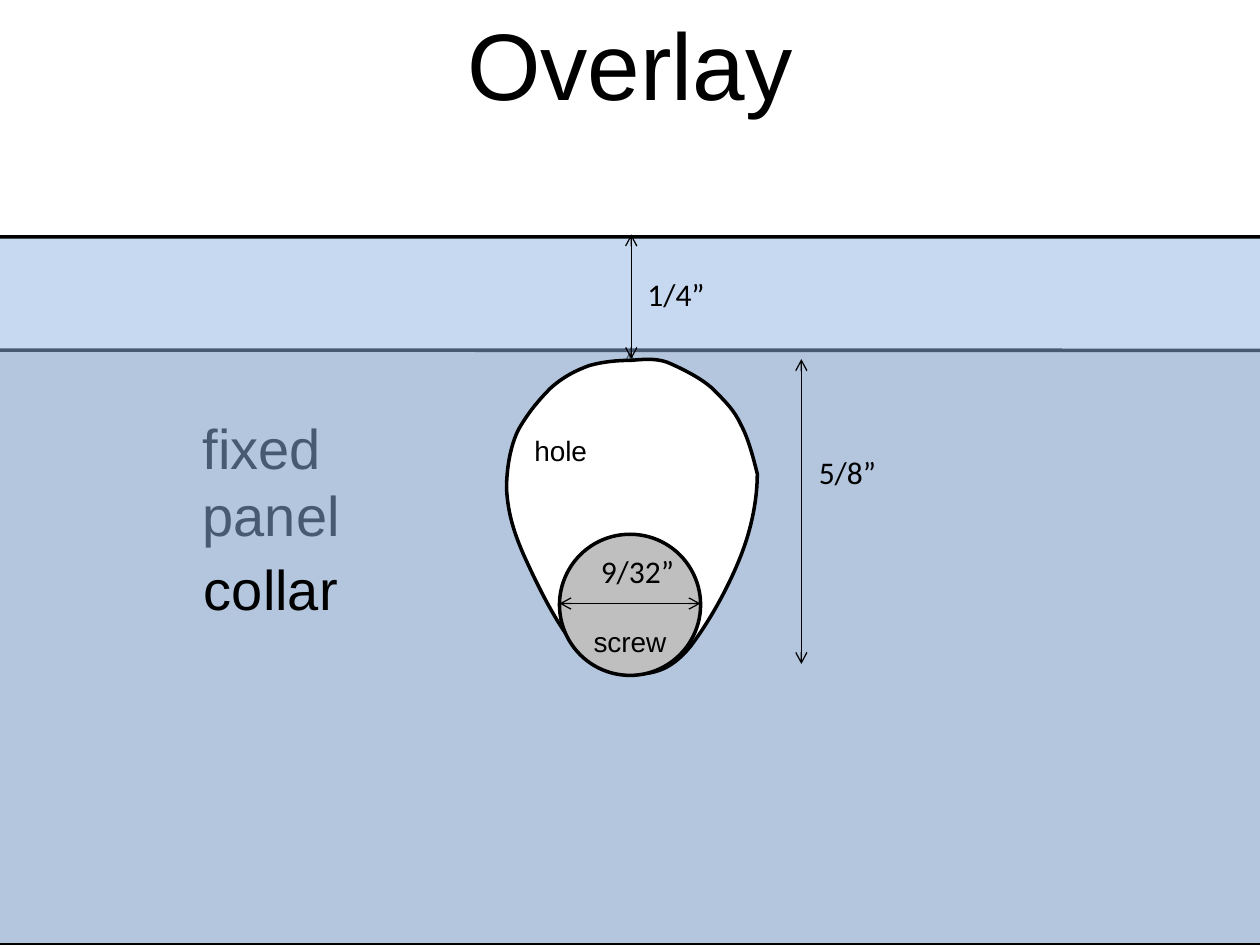
import pptx
import pptx.util
import pptx.dml.color
import pptx.enum.shapes
import pptx.enum.text
import lxml.etree

Inch, Pt = pptx.util.Inches, pptx.util.Pt
Kind = pptx.enum.shapes.MSO_SHAPE
Align = pptx.enum.text.PP_ALIGN
Anchor = pptx.enum.text.MSO_ANCHOR
A = "http://schemas.openxmlformats.org/drawingml/2006/main"
BLACK = "000000"

WIDE, HIGH = 10, 7.5
SIDE = -0.24  # plates run past both slide edges
PANEL_TOP, COLLAR_TOP = 2.78, 1.88
HOLE_TOP, HOLE_LOW = 2.85, 5.27
SCREW = (4.44, 4.24, 1.12)  # left, top, diameter

ARROWS = [  # x1, y1, x2, y2
    (5.01, 1.86, 5.01, HOLE_TOP),
    (6.36, HOLE_TOP, 6.36, HOLE_LOW),
    (SCREW[0], 4.79, SCREW[0] + SCREW[2], 4.79),
]
SIZES = [  # text, left, top, width
    ("1/4”", 5.04, 2.13, 1.15),
    ("5/8”", 6.4, 3.55, 1.15),
    ("9/32”", 4.67, 4.33, 1.24),
]
HOLE_START = (415, 439)  # hundredths of an inch
HOLE_CURVES = [  # two control points and an end point
    [(406, 418), (403, 404), (402, 388)],
    [(402, 372), (405, 353), (412, 340)],
    [(419, 328), (427, 318), (437, 308)],
    [(447, 299), (457, 294), (468, 290)],
    [(479, 287), (490, 286), (501, 286)],
    [(512, 285), (523, 284), (533, 289)],
    [(544, 294), (560, 302), (568, 311)],
    [(576, 319), (583, 326), (588, 337)],
    [(594, 348), (598, 364), (601, 376)],
    [(601, 395), (597, 418), (588, 441)],
    [(579, 464), (564, 492), (548, 513)],
    [(531, 534), (516, 535), (501, 535)],
    [(486, 534), (472, 531), (456, 512)],
    [(440, 493), (424, 459), (415, 439)],
]


def color(code):
    return pptx.dml.color.RGBColor.from_string(code)


def write(shape, text, size=16, font="Arial", align=Align.LEFT,
          anchor=Anchor.TOP, wrap=True, inset=(0.1, 0.05, 0.1, 0.05)):
    """Fill a shape with text; inset is left, top, right, bottom."""
    frame = shape.text_frame
    frame.text = text
    frame.word_wrap = wrap
    frame.vertical_anchor = anchor
    (frame.margin_left, frame.margin_top,
     frame.margin_right, frame.margin_bottom) = map(Inch, inset)
    for para in frame.paragraphs:
        para.alignment = align
        para.font.size = Pt(size)
        para.font.name = font
        para.font.color.rgb = color(BLACK)


def label(slide, text, left, top, width, height, **form):
    box = slide.shapes.add_textbox(*map(Inch, (left, top, width, height)))
    write(box, text, **form)


def paint(shape, fill, alpha=None):
    shape.shadow.inherit = False
    shape.fill.solid()
    shape.fill.fore_color.rgb = color(fill)
    shape.line.color.rgb = color(BLACK)
    shape.line.width = Pt(2)
    if alpha:
        tint = shape.fill._xPr.find(f"{{{A}}}solidFill")[0]
        lxml.etree.SubElement(tint, f"{{{A}}}alpha", val=str(alpha * 1000))


def plate(slide, top, fill, alpha=None):
    """Draw a sheet from top down to the foot of the slide."""
    sheet = slide.shapes.add_shape(
        Kind.ROUNDED_RECTANGLE, Inch(SIDE), Inch(top),
        Inch(10.56), Inch(HIGH - top))
    sheet.adjustments[0] = 0.019
    paint(sheet, fill, alpha)


def arrow(slide, *ends):
    """Draw a thin line with an open arrowhead at both ends."""
    line = slide.shapes.add_connector(
        pptx.enum.shapes.MSO_CONNECTOR.STRAIGHT, *map(Inch, ends))
    line.line.color.rgb = color(BLACK)
    line.line.width = Pt(0.75)
    for end in ("headEnd", "tailEnd"):
        lxml.etree.SubElement(line.line._ln, f"{{{A}}}{end}", type="arrow")
    lxml.etree.SubElement(line._element.spPr, f"{{{A}}}effectLst")


def blob(slide, start, curves):
    """Draw a closed outline, each three points becoming one cubic curve."""
    pen = slide.shapes.build_freeform(*start, scale=Inch(0.01))
    pen.add_line_segments(sum(curves, []), close=True)
    shape = pen.convert_to_shape()
    lines = list(shape._element.iter(f"{{{A}}}lnTo"))
    for first in range(0, len(lines), 3):
        curve = lxml.etree.Element(f"{{{A}}}cubicBezTo")
        lines[first].addprevious(curve)
        for line in lines[first:first + 3]:
            curve.append(line[0])
            line.getparent().remove(line)
    return shape


def main():
    deck = pptx.Presentation()
    deck.slide_width, deck.slide_height = Inch(WIDE), Inch(HIGH)
    slide = deck.slides.add_slide(deck.slide_layouts[5])

    title = slide.shapes.title
    title.left, title.top, title.width, title.height = map(
        Inch, (0, 0, WIDE, 1))
    write(title, "Overlay", size=54, align=Align.CENTER, anchor=Anchor.MIDDLE)

    plate(slide, PANEL_TOP, "D9D9D9")
    arrow(slide, 5, 2.79, 5, 4.23)
    label(slide, "fixed\npanel", 1.51, 3.23, 1.3, 1.18, size=32, wrap=False)
    plate(slide, COLLAR_TOP, "8EB4E3", alpha=50)

    hole = blob(slide, HOLE_START, HOLE_CURVES)
    paint(hole, "FFFFFF")
    write(hole, "hole", inset=(0.22, 0.6, 0, 0))

    left, top, size = SCREW
    screw = slide.shapes.add_shape(
        Kind.OVAL, *map(Inch, (left, top, size, size)))
    paint(screw, "BFBFBF")
    write(screw, "screw", align=Align.CENTER, anchor=Anchor.BOTTOM,
          inset=(0, 0, 0, -0.03))

    for ends in ARROWS:
        arrow(slide, *ends)
    for text, left, top, width in SIZES:
        label(slide, text, left, top, width, 0.4, size=18, font="Calibri")
    label(slide, "collar", 1.52, 4.35, 1.27, 0.64, size=32, wrap=False)

    deck.save("out.pptx")


if __name__ == "__main__":
    main()
